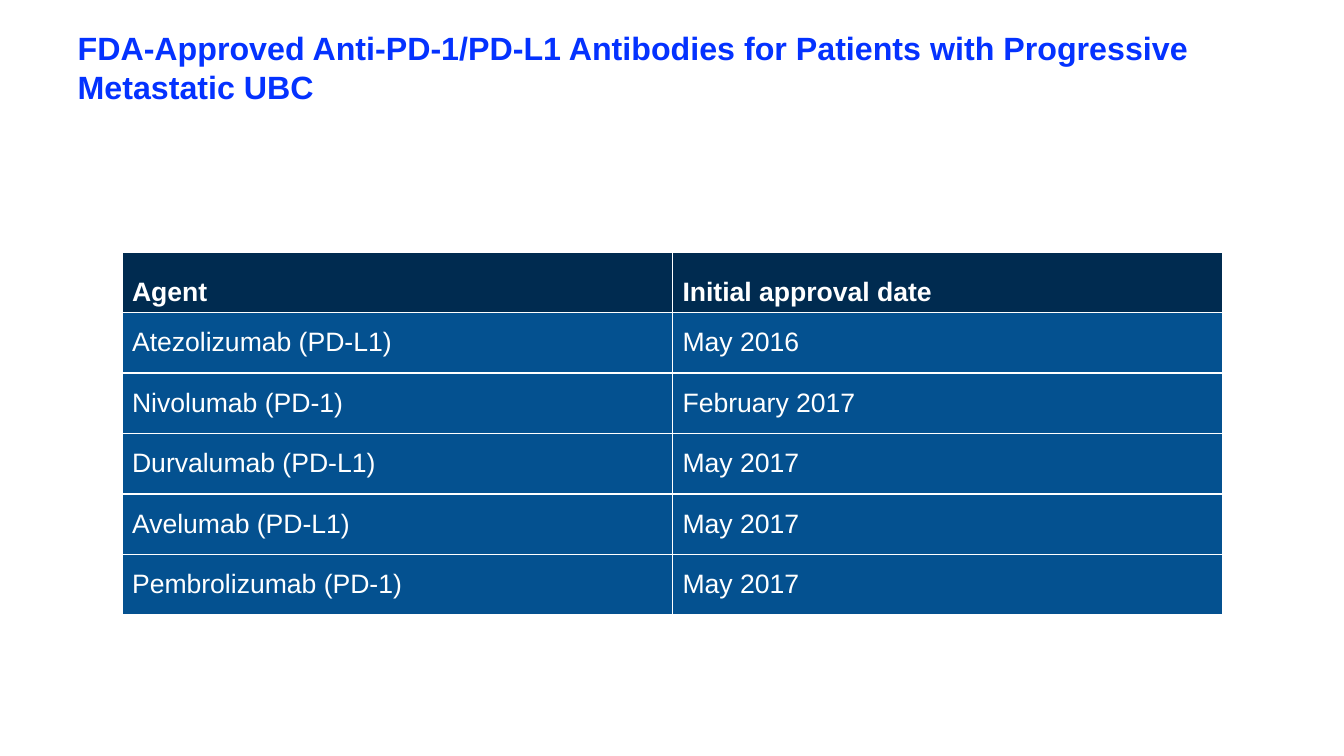
from lxml import etree
from pptx import Presentation
from pptx import util as u
from pptx.dml.color import RGBColor
from pptx.enum import text
from pptx.oxml.ns import qn

TITLE = ("FDA-Approved Anti-PD-1/PD-L1 Antibodies for Patients "
         "with Progressive Metastatic UBC")
AGENTS = [
    ("Agent", "Initial approval date"),
    ("Atezolizumab (PD-L1)", "May 2016"),
    ("Nivolumab (PD-1)", "February 2017"),
    ("Durvalumab (PD-L1)", "May 2017"),
    ("Avelumab (PD-L1)", "May 2017"),
    ("Pembrolizumab (PD-1)", "May 2017"),
]


def paint(fill, color):
    fill.solid()
    fill.fore_color.rgb = RGBColor.from_string(color)


def style(frame, size, color, bold):
    para = frame.paragraphs[0]
    para.alignment = text.PP_ALIGN.LEFT
    for run in para.runs:
        font = run.font
        font.name, font.size, font.bold = "Arial", u.Pt(size), bold
        paint(font.fill, color)


def border(cell, color, width):
    props = cell._tc.get_or_add_tcPr()
    for side in ("lnL", "lnR", "lnT", "lnB"):
        line = etree.SubElement(props, qn(f"a:{side}"), w=str(u.Pt(width)))
        fill = etree.SubElement(line, qn("a:solidFill"))
        etree.SubElement(fill, qn("a:srgbClr"), val=color)


def add_title(slide, box):
    title = slide.shapes.title
    title.left, title.top, title.width, title.height = map(u.Inches, box)
    frame = title.text_frame
    frame.text = TITLE
    frame.word_wrap = True
    frame.auto_size = text.MSO_AUTO_SIZE.NONE
    frame.vertical_anchor = text.MSO_ANCHOR.MIDDLE
    style(frame, 23, "0432FF", True)


def add_agents(slide, box):
    """Fill the box with equal rows and columns, the first row as header."""
    table = slide.shapes.add_table(
        len(AGENTS), len(AGENTS[0]), *map(u.Inches, box)).table
    for r, row in enumerate(AGENTS):
        head = r == 0
        for c, words in enumerate(row):
            cell = table.cell(r, c)
            cell.text_frame.text = words
            cell.vertical_anchor = (text.MSO_ANCHOR.BOTTOM if head
                                    else text.MSO_ANCHOR.MIDDLE)
            style(cell.text_frame, 19, "FFFFFF", head)
            border(cell, "FFFFFF", 1)
            paint(cell.fill, "002B50" if head else "045190")


def main():
    deck = Presentation()
    deck.slide_width, deck.slide_height = u.Inches(13.33), u.Inches(7.5)
    slide = deck.slides.add_slide(deck.slide_layouts[5])
    paint(slide.background.fill, "FFFFFF")
    add_title(slide, (0.67, 0, 12.67, 1.33))
    add_agents(slide, (1.21, 2.5, 10.92, 3.6))
    deck.save("out.pptx")


if __name__ == "__main__":
    main()
